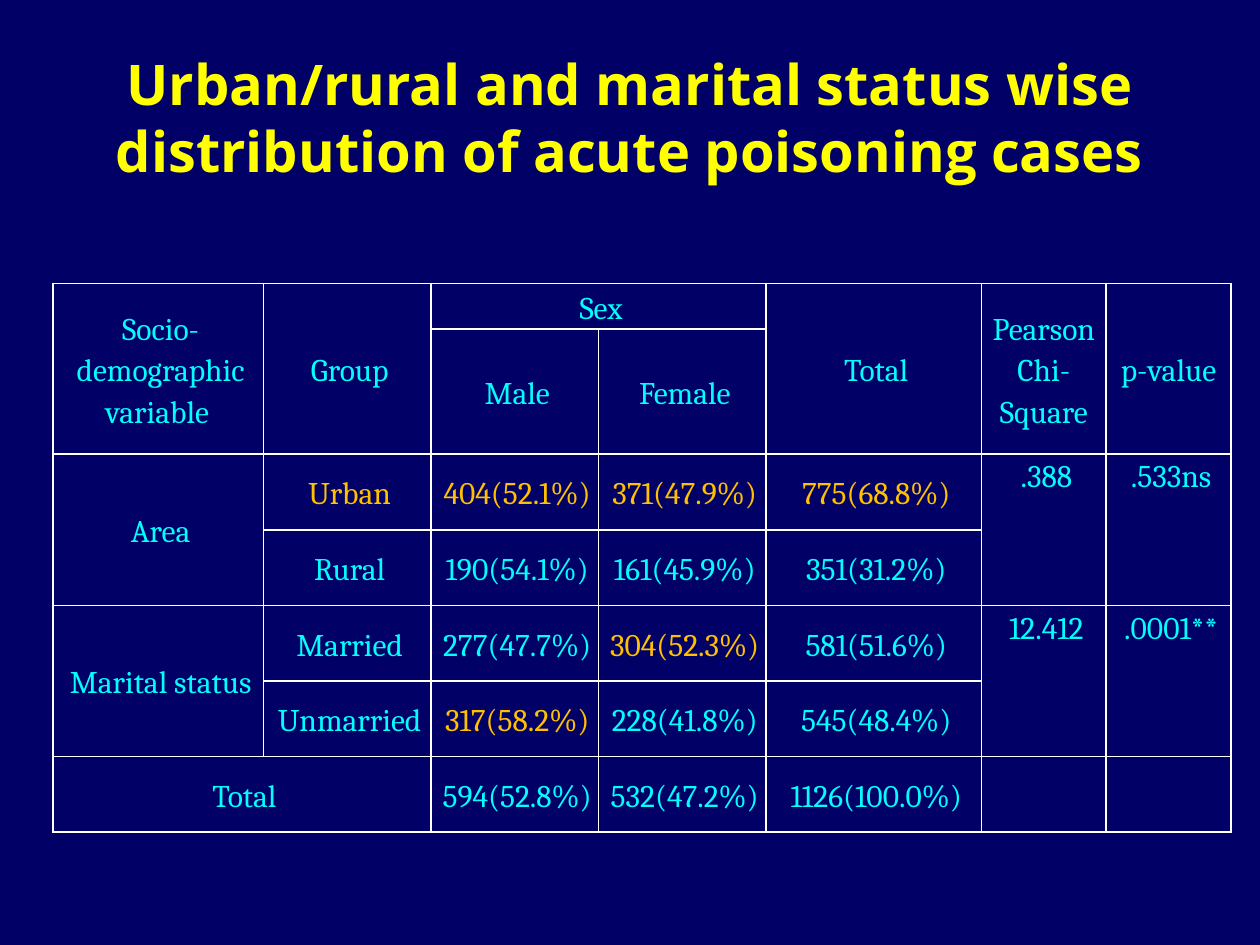
from dataclasses import dataclass

from lxml.etree import SubElement
from pptx import Presentation
from pptx.dml.color import RGBColor
from pptx.enum.text import MSO_ANCHOR, PP_ALIGN
from pptx.oxml.ns import qn
from pptx.util import Inches, Pt

NAVY = RGBColor(0x00, 0x00, 0x66)
YELLOW = RGBColor(0xFF, 0xFF, 0x00)
CYAN = RGBColor(0x00, 0xFF, 0xFF)
GOLD = RGBColor(0xFF, 0xC0, 0x00)
WHITE = RGBColor(0xFF, 0xFF, 0xFF)

COLUMN_WIDTHS = [1.67, 1.33, 1.33, 1.33, 1.71, 0.99, 0.99]
ROW_HEIGHTS = [0.36, 0.86] + [0.6] * 5


@dataclass(frozen=True)
class Entry:
    row: int
    column: int
    text: str
    rows: int = 1
    columns: int = 1
    color: RGBColor = CYAN
    anchor: MSO_ANCHOR = MSO_ANCHOR.MIDDLE
    left_margin: float = 0.04


ENTRIES = [
    Entry(0, 0, "Socio-demographic variable ", rows=2),
    Entry(0, 1, "Group", rows=2),
    Entry(0, 2, "Sex", columns=2),
    Entry(0, 4, "Total", rows=2),
    Entry(0, 5, "Pearson\nChi- Square", rows=2, left_margin=0),
    Entry(0, 6, "p-value", rows=2, left_margin=0),
    Entry(1, 2, "Male"),
    Entry(1, 3, "Female"),
    Entry(2, 0, "Area", rows=2),
    Entry(2, 1, "Urban", color=GOLD),
    Entry(2, 2, "404(52.1%)", color=GOLD),
    Entry(2, 3, "371(47.9%)", color=GOLD),
    Entry(2, 4, "775(68.8%)", color=GOLD),
    Entry(2, 5, ".388", rows=2, anchor=MSO_ANCHOR.TOP),
    Entry(2, 6, ".533ns", rows=2, anchor=MSO_ANCHOR.TOP),
    Entry(3, 1, "Rural"),
    Entry(3, 2, "190(54.1%)"),
    Entry(3, 3, "161(45.9%)"),
    Entry(3, 4, "351(31.2%)"),
    Entry(4, 0, "Marital status", rows=2),
    Entry(4, 1, "Married"),
    Entry(4, 2, "277(47.7%)"),
    Entry(4, 3, "304(52.3%)", color=GOLD),
    Entry(4, 4, "581(51.6%)"),
    Entry(4, 5, "12.412", rows=2, anchor=MSO_ANCHOR.TOP),
    Entry(4, 6, ".0001**", rows=2, anchor=MSO_ANCHOR.TOP),
    Entry(5, 1, "Unmarried"),
    Entry(5, 2, "317(58.2%)", color=GOLD),
    Entry(5, 3, "228(41.8%)"),
    Entry(5, 4, "545(48.4%)"),
    Entry(6, 0, "Total", columns=2),
    Entry(6, 2, "594(52.8%)"),
    Entry(6, 3, "532(47.2%)"),
    Entry(6, 4, "1126(100.0%)"),
]


def write_text(text_frame, text: str, *, font_name: str, size: float, color: RGBColor,
               bold: bool = False, line_spacing: float | None = None,
               left_margin: float = 0) -> None:
    text_frame.text = text
    for paragraph in text_frame.paragraphs:
        paragraph.alignment = PP_ALIGN.CENTER
        paragraph.line_spacing = line_spacing
        if left_margin:
            properties = paragraph._p.get_or_add_pPr()
            properties.set("marL", str(Inches(left_margin)))
            properties.set("indent", "0")
        for run in paragraph.runs:
            run.font.name = font_name
            run.font.size = Pt(size)
            run.font.bold = bold
            run.font.color.rgb = color


def style_cell(cell) -> None:
    properties = cell._tc.get_or_add_tcPr()
    for side in ("a:lnL", "a:lnR", "a:lnT", "a:lnB"):
        border = SubElement(properties, qn(side), w=str(Pt(1)))
        fill = SubElement(border, qn("a:solidFill"))
        SubElement(fill, qn("a:srgbClr"), val=str(WHITE))
    cell.fill.background()
    cell.margin_left = cell.margin_right = cell.margin_top = cell.margin_bottom = 0


def fill_entry(table, entry: Entry) -> None:
    cell = table.cell(entry.row, entry.column)
    if entry.rows > 1 or entry.columns > 1:
        cell.merge(table.cell(entry.row + entry.rows - 1, entry.column + entry.columns - 1))
    cell.vertical_anchor = entry.anchor
    write_text(cell.text_frame, entry.text, font_name="Cambria", size=18,
               color=entry.color, line_spacing=1.15, left_margin=entry.left_margin)


def add_title(slide) -> None:
    title = slide.shapes.title
    title.left, title.top = Inches(0.5), Inches(0.3)
    title.width, title.height = Inches(9), Inches(1.25)
    title.text_frame.vertical_anchor = MSO_ANCHOR.MIDDLE
    write_text(title.text_frame,
               "Urban/rural and marital status wise distribution of acute poisoning cases",
               font_name="Open Sans", size=32, color=YELLOW, bold=True)


def add_distribution_table(slide) -> None:
    table = slide.shapes.add_table(
        len(ROW_HEIGHTS), len(COLUMN_WIDTHS), Inches(0.42), Inches(2.25),
        Inches(sum(COLUMN_WIDTHS)), Inches(sum(ROW_HEIGHTS))).table
    table.first_row = table.horz_banding = False
    for column, width in zip(table.columns, COLUMN_WIDTHS):
        column.width = Inches(width)
    for row, height in zip(table.rows, ROW_HEIGHTS):
        row.height = Inches(height)
    for cell in table.iter_cells():
        style_cell(cell)
    for entry in ENTRIES:
        fill_entry(table, entry)


def main() -> None:
    presentation = Presentation()
    presentation.slide_width, presentation.slide_height = Inches(10), Inches(7.5)
    slide = presentation.slides.add_slide(presentation.slide_layouts[5])
    slide.background.fill.solid()
    slide.background.fill.fore_color.rgb = NAVY
    add_title(slide)
    add_distribution_table(slide)
    presentation.save("out.pptx")


if __name__ == "__main__":
    main()
